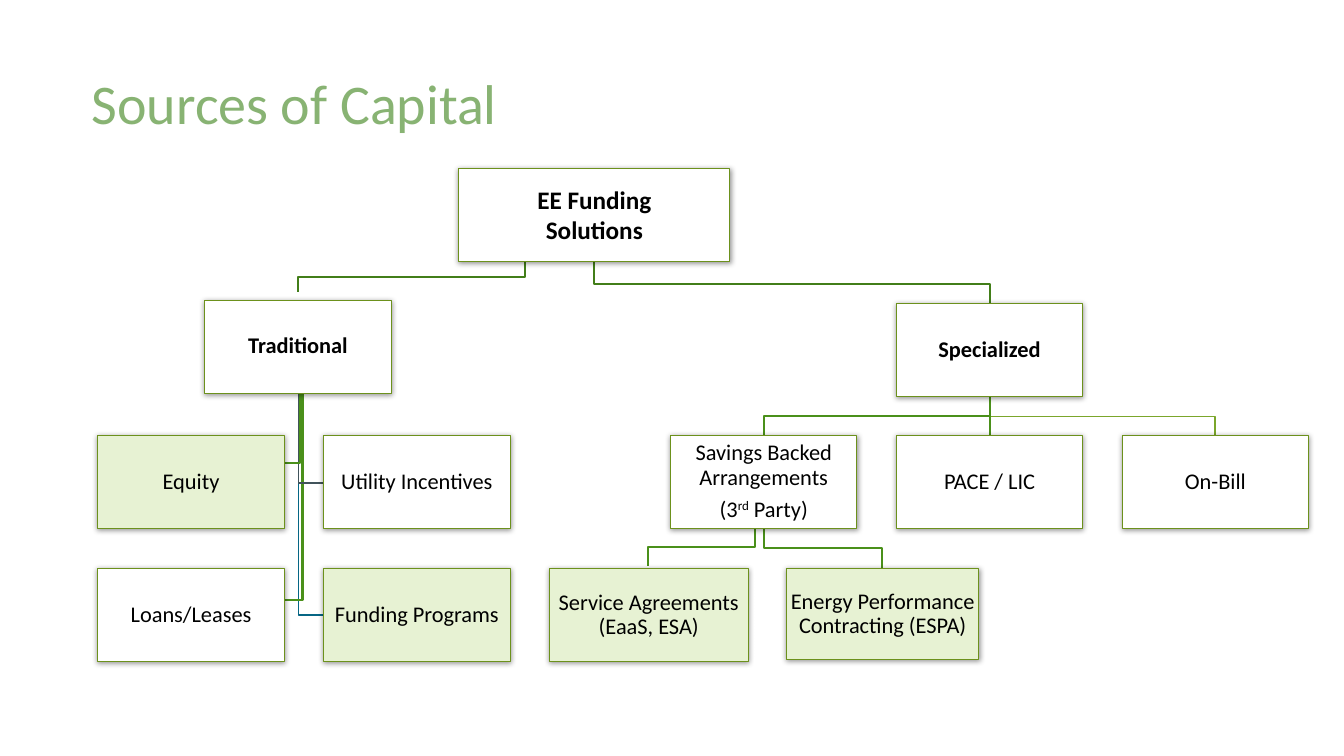
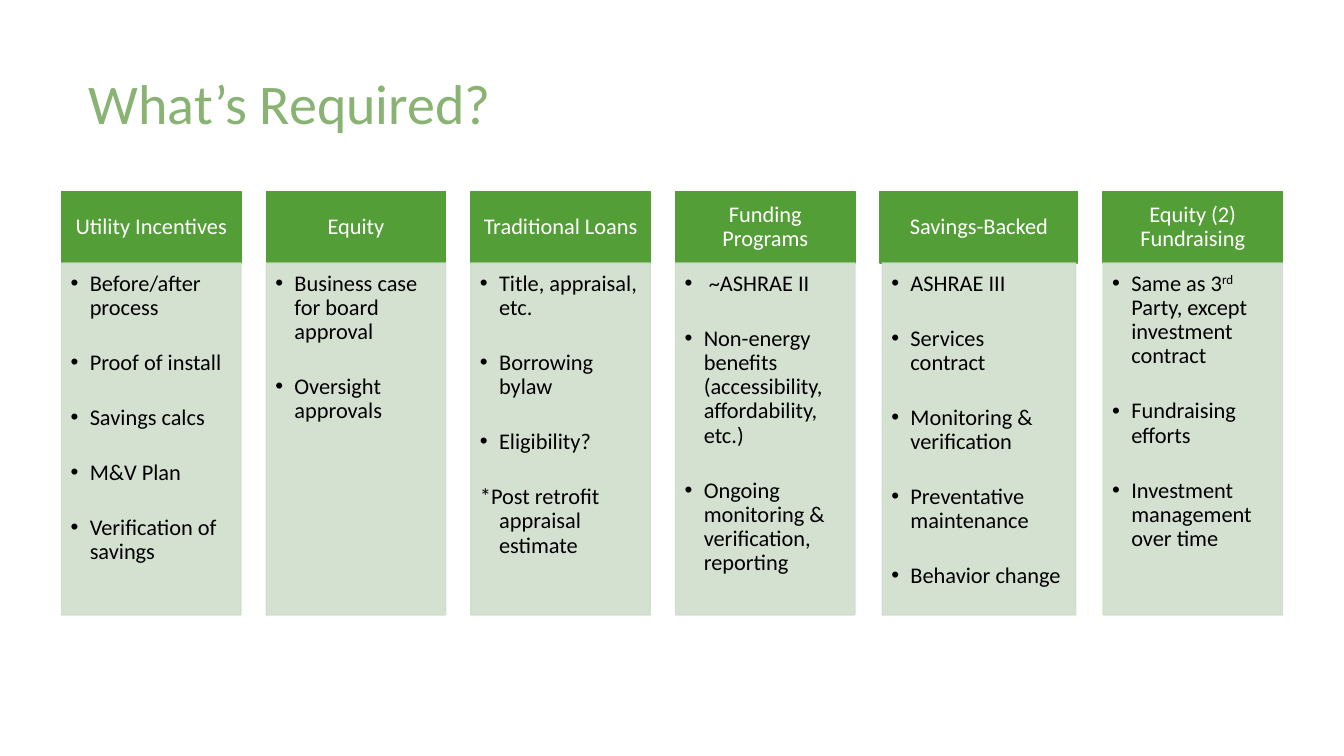
from lxml.etree import SubElement
from pptx import Presentation
from pptx.dml.color import RGBColor
from pptx.enum.shapes import MSO_CONNECTOR, MSO_SHAPE
from pptx.enum.text import MSO_ANCHOR, MSO_AUTO_SIZE, PP_ALIGN
from pptx.oxml.ns import qn
from pptx.util import Inches, Pt

COLORS = {
    "title": "88B373",
    "black": "000000",
    "white": "FFFFFF",
    "highlight": "E7F2D3",
    "card_line": "6C911C",
    "trunk": "427E19",
    "branch": "4A901A",
    "olive": "7BA62B",
    "teal": "066684",
    "slate": "41535B",
    "header": "539E36",
    "panel": "CFDECC",
}
FONT_NAME = "Calibri"
MIDDLE = MSO_ANCHOR.MIDDLE
CENTER = PP_ALIGN.CENTER


def color(name):
    return RGBColor.from_string(COLORS[name])


def set_values(target, values):
    for name, value in values.items():
        setattr(target, name, value)


class Deck:
    def __init__(self):
        self.presentation = Presentation()
        set_values(self.presentation, {"slide_width": Inches(13.33), "slide_height": Inches(7.5)})
        self.slide = None

    def add_slide(self, title, left, top, width, height):
        self.slide = self.presentation.slides.add_slide(self.presentation.slide_layouts[5])
        placeholder = self.slide.shapes.title
        set_values(placeholder, {
            "left": Inches(left), "top": Inches(top),
            "width": Inches(width), "height": Inches(height),
        })
        self.fill_text(placeholder, [title], (0.1, 0.05, 0.1, 0.05), 40, "title",
                       MSO_ANCHOR.TOP, PP_ALIGN.LEFT)

    def fill_text(self, shape, texts, margins, size, text_color, anchor, alignment,
                  bold=False, spacing=0.9, gap=0, bullets=False):
        frame = shape.text_frame
        sides = ("margin_left", "margin_top", "margin_right", "margin_bottom")
        set_values(frame, dict(zip(sides, map(Inches, margins))))
        set_values(frame, {
            "word_wrap": True, "auto_size": MSO_AUTO_SIZE.NONE, "vertical_anchor": anchor,
        })
        for index, text in enumerate(texts):
            paragraph = frame.add_paragraph() if index else frame.paragraphs[0]
            if bullets:
                self.hang(paragraph, bullet=not text.startswith("*"))
            set_values(paragraph, {
                "alignment": alignment, "line_spacing": spacing,
                "space_before": Pt(gap if index else 0),
            })
            for part, words in enumerate(text.split("^")):
                run = paragraph.add_run()
                run.text = words
                set_values(run.font, {"name": FONT_NAME, "size": Pt(size), "bold": bold})
                run.font.color.rgb = color(text_color)
                if part % 2:
                    run._r.get_or_add_rPr().set("baseline", "30000")

    def hang(self, paragraph, bullet):
        properties = paragraph._p.get_or_add_pPr()
        properties.set("marL", str(Inches(0.19)))
        properties.set("indent", str(-Inches(0.19)))
        if bullet:
            SubElement(properties, qn("a:buFont"), typeface="Arial")
            SubElement(properties, qn("a:buChar"), char="•")
        else:
            SubElement(properties, qn("a:buNone"))

    def add_box(self, left, top, width, height, fill, line, weight):
        shape = self.slide.shapes.add_shape(
            MSO_SHAPE.RECTANGLE, Inches(left), Inches(top), Inches(width), Inches(height))
        shape.shadow.inherit = False
        shape.fill.solid()
        shape.fill.fore_color.rgb = color(fill)
        self.stroke(shape, line, weight)
        return shape

    def stroke(self, shape, line, weight):
        shape.line.color.rgb = color(line)
        shape.line.width = Pt(weight)

    def add_card(self, left, top, texts, fill="white", width=1.85, height=0.92, **text_format):
        shape = self.add_box(left, top, width, height, fill, "card_line", 0.75)
        effects = shape._element.spPr.find(qn("a:effectLst"))
        shadow = SubElement(effects, qn("a:outerShdw"), blurRad=str(Pt(4)), dist=str(Pt(1)),
                            dir="5400000", rotWithShape="0")
        shade = SubElement(shadow, qn("a:srgbClr"), val=COLORS["black"])
        SubElement(shade, qn("a:alpha"), val="42000")
        values = {"size": 16, **text_format}
        self.fill_text(shape, texts, (0.01,) * 4, text_color="black", anchor=MIDDLE,
                       alignment=CENTER, **values)

    def add_route(self, line, weight, *points):
        start, *rest = [(Inches(x), Inches(y)) for x, y in points]
        builder = self.slide.shapes.build_freeform(*start, scale=1.0)
        builder.add_line_segments(rest, close=False)
        shape = builder.convert_to_shape()
        shape.shadow.inherit = False
        shape.fill.background()
        self.stroke(shape, line, weight)

    def add_drop(self, line, weight, x, y, turn, end_x, end_y):
        self.add_route(line, weight, (x, y), (x, turn), (end_x, turn), (end_x, end_y))

    def add_side(self, line, weight, x, y, end_x, end_y):
        self.add_route(line, weight, (x, y), (x, end_y), (end_x, end_y))

    def add_line(self, line, weight, x, y, end_x, end_y):
        connector = self.slide.shapes.add_connector(
            MSO_CONNECTOR.STRAIGHT, Inches(x), Inches(y), Inches(end_x), Inches(end_y))
        self.stroke(connector, line, weight)
        SubElement(connector._element.spPr, qn("a:effectLst"))

    def add_column(self, left, width, heading, items, trim):
        header = self.add_box(left, 1.9, width, 0.71, "header", "header", 1)
        self.fill_text(header, [heading], (0.12, 0.07, 0.12, 0.07), 16, "white", MIDDLE, CENTER)
        panel = self.add_box(left + trim, 2.61, width - 2 * trim, 3.49, "panel", "panel", 1)
        for shade in panel._element.spPr.iter(qn("a:srgbClr")):
            SubElement(shade, qn("a:alpha"), val="89000")
        self.fill_text(panel, items, (0.09, 0.09, 0.12, 0.14), 16, "black", MSO_ANCHOR.TOP,
                       PP_ALIGN.LEFT, gap=22, bullets=True)


def build_sources(deck):
    deck.add_slide("Sources of Capital", 0.81, 0.71, 11.4, 0.81)
    row_one, row_two, row_three = 3.01, 4.32, 5.64
    drops = [
        ("olive", 1, 9.82, 3.94, 4.13, 12.05, row_two),
        ("branch", 1.5, 7.58, 5.25, 5.44, 8.75, row_three),
        ("branch", 1.5, 7.49, 5.25, 5.43, 6.43, 5.62),
        ("branch", 1.5, 9.82, 3.94, 4.13, 7.58, row_two),
        ("trunk", 1.5, 5.89, 2.59, 2.82, 9.82, row_one),
        ("trunk", 1.5, 5.21, 2.59, 2.75, 2.96, 2.9),
    ]
    for drop in drops:
        deck.add_drop(*drop)
    deck.add_line("branch", 1.5, 9.82, 3.94, 9.82, row_two)
    sides = [
        ("teal", 1, 2.96, 3.21, 6.1),
        ("branch", 1.5, 3, 2.82, 5.95),
        ("slate", 1, 2.96, 3.21, 4.79),
        ("branch", 1.5, 2.98, 2.82, 4.59),
    ]
    for line, weight, x, end_x, end_y in sides:
        deck.add_side(line, weight, x, 3.9, end_x, end_y)

    deck.add_card(4.55, 1.67, ["EE Funding", "Solutions"], width=2.69, size=18, bold=True,
                  spacing=1.0)
    deck.add_card(2.03, 2.98, ["Traditional"], bold=True)
    deck.add_card(8.89, row_one, ["Specialized"], bold=True)
    cards = [
        (0.97, row_two, ["Equity"], "highlight"),
        (3.21, row_two, ["Utility Incentives"], "white"),
        (0.97, row_three, ["Loans/Leases"], "white"),
        (3.21, row_three, ["Funding Programs"], "highlight"),
        (8.89, row_two, ["PACE / LIC"], "white"),
        (11.13, row_two, ["On-Bill"], "white"),
    ]
    for card in cards:
        deck.add_card(*card)
    deck.add_card(6.65, row_two, ["Savings Backed Arrangements", "(3^rd^ Party)"], gap=5.6)
    deck.add_card(5.45, row_three, ["Service Agreements (EaaS, ESA)"], "highlight", width=1.97)
    deck.add_card(7.8, row_three, ["Energy Performance Contracting (ESPA)"], "highlight",
                  width=1.91, height=0.9)


def build_requirements(deck):
    deck.add_slide("What’s Required?", 0.78, 0.71, 9.42, 1.66)
    columns = [
        ("Utility Incentives", 1.78, 0, [
            "Before/after process", "Proof of install", "Savings calcs", "M&V Plan",
            "Verification of savings"]),
        ("Equity", 1.78, 0, ["Business case for board approval", "Oversight approvals"]),
        ("Traditional Loans", 1.78, 0, [
            "Title, appraisal, etc.", "Borrowing bylaw", "Eligibility?",
            "*Post retrofit appraisal estimate"]),
        ("Funding Programs", 1.78, 0, [
            " ~ASHRAE II", "Non-energy benefits (accessibility, affordability, etc.)",
            "Ongoing monitoring & verification, reporting"]),
        ("Savings-Backed", 1.96, 0.02, [
            "ASHRAE III", "Services contract", "Monitoring & verification",
            "Preventative maintenance", "Behavior change"]),
        ("Equity (2) Fundraising", 1.78, 0, [
            "Same as 3^rd ^Party, except investment contract", "Fundraising efforts",
            "Investment management over time"]),
    ]
    left, column_gap = 0.61, 0.25
    for heading, width, trim, items in columns:
        deck.add_column(left, width, heading, items, trim)
        left += width + column_gap


def main():
    deck = Deck()
    build_sources(deck)
    build_requirements(deck)
    deck.presentation.save("out.pptx")


if __name__ == "__main__":
    main()
